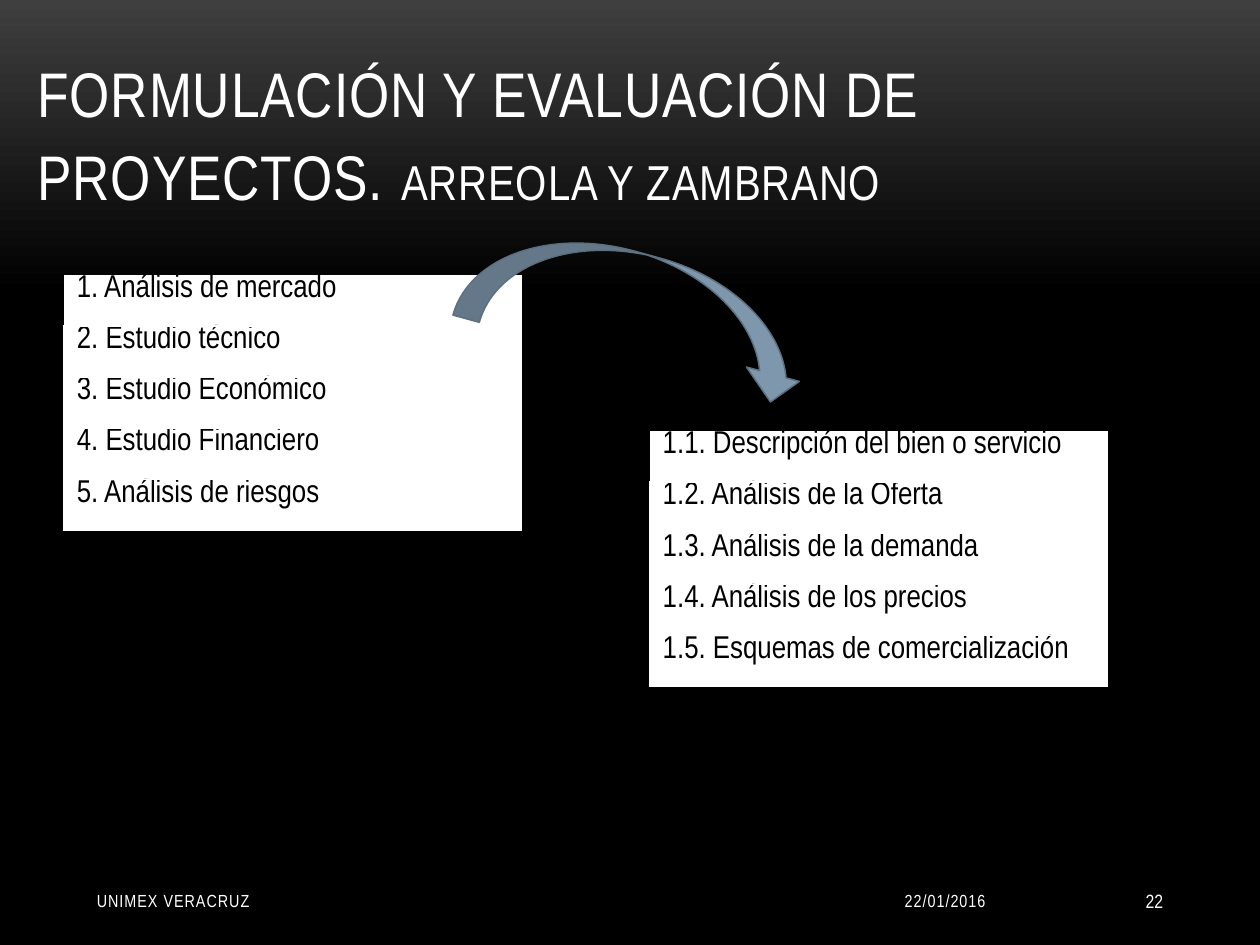
from dataclasses import dataclass

from lxml import etree
from pptx import Presentation
from pptx.dml.color import RGBColor
from pptx.enum.shapes import MSO_SHAPE
from pptx.enum.text import MSO_ANCHOR, PP_ALIGN
from pptx.oxml.ns import qn
from pptx.util import Inches, Pt

LEFT, RIGHT = PP_ALIGN.LEFT, PP_ALIGN.RIGHT
MIDDLE, BOTTOM = MSO_ANCHOR.MIDDLE, MSO_ANCHOR.BOTTOM
CURVED_ARROW = MSO_SHAPE.CURVED_DOWN_ARROW
FONT = "Arial Narrow"
WHITE, BLACK = "FFFFFF", "000000"
TABLE_WIDTH, ROW_HEIGHT = 3.63, 0.406


@dataclass
class TopicTable:
    left: float
    top: float
    topics: list[str]


@dataclass
class Label:
    text: str
    left: float
    width: float
    size: float = 10
    spacing: float = 0.6
    align: PP_ALIGN = RIGHT


TABLES = [
    TopicTable(0.51, 2.18, [
        "1. Análisis de mercado",
        "2. Estudio técnico",
        "3. Estudio Económico",
        "4. Estudio Financiero",
        "5. Análisis de riesgos",
    ]),
    TopicTable(5.16, 3.42, [
        "1.1. Descripción del bien o servicio",
        "1.2. Análisis de la Oferta",
        "1.3. Análisis de la demanda",
        "1.4. Análisis de los precios",
        "1.5. Esquemas de comercialización",
    ]),
]

FOOTER = [
    Label("22/01/2016", 6.25, 1.67),
    Label("UNIMEX VERACRUZ", 0.67, 3.17, align=LEFT),
    Label("22", 8.25, 1.08, size=11, spacing=0),
]


def rgb(value: str) -> RGBColor:
    return RGBColor.from_string(value)


def add_span(para, text: str, *, size: float, color: str = WHITE, spacing: float = 0) -> None:
    span = para.add_run()
    span.text = text
    span.font.name = FONT
    span.font.size = Pt(size)
    span.font.color.rgb = rgb(color)
    if spacing:
        span.font._element.set("spc", str(round(spacing * 100)))


def add_box(page, left: float, top: float, width: float, height: float,
            *, anchor: MSO_ANCHOR, align: PP_ALIGN = LEFT):
    """Add an empty text box and return its first paragraph."""
    frame = page.shapes.add_textbox(
        Inches(left), Inches(top), Inches(width), Inches(height)).text_frame
    frame.word_wrap = True
    frame.vertical_anchor = anchor
    para = frame.paragraphs[0]
    para.alignment = align
    return para


def set_borders(cell, color: str | None) -> None:
    """Draw one-point borders, or none; borders must come before the cell's fill."""
    properties = cell._tc.get_or_add_tcPr()
    for index, side in enumerate(("lnL", "lnR", "lnT", "lnB")):
        line = etree.Element(qn(f"a:{side}"), w=str(Pt(1)))
        if color:
            fill = etree.SubElement(line, qn("a:solidFill"))
            etree.SubElement(fill, qn("a:srgbClr"), val=color)
        else:
            etree.SubElement(line, qn("a:noFill"))
        properties.insert(index, line)


def add_topic_table(page, data: TopicTable) -> None:
    count = len(data.topics)
    table = page.shapes.add_table(
        count, 1, Inches(data.left), Inches(data.top),
        Inches(TABLE_WIDTH), Inches(ROW_HEIGHT * count)).table
    table.first_row = table.horz_banding = False
    for index, topic in enumerate(data.topics):
        cell = table.cell(index, 0)
        cell.margin_top = cell.margin_bottom = 0
        cell.fill.solid()
        cell.fill.fore_color.rgb = rgb(WHITE)
        set_borders(cell, WHITE if index else None)
        add_span(cell.text_frame.paragraphs[0], topic, size=18, color=BLACK)


def add_arrow(page) -> None:
    arrow = page.shapes.add_shape(
        CURVED_ARROW, Inches(3.66), Inches(2.02), Inches(2.83), Inches(0.87))
    arrow.rotation = 15.3
    arrow.shadow.inherit = False
    arrow.fill.solid()
    arrow.fill.fore_color.rgb = rgb("7E97AD")
    arrow.line.color.rgb = rgb("5D7080")
    arrow.line.width = Pt(0.85)


def set_background(page) -> None:
    fill = page.background.fill
    fill.gradient()
    fill.gradient_angle = 270
    for stop, (position, color) in zip(fill.gradient_stops, [(0, "3F3F3F"), (0.31, BLACK)]):
        stop.position = position
        stop.color.rgb = rgb(color)


def main() -> None:
    deck = Presentation()
    deck.slide_width, deck.slide_height = Inches(10), Inches(7.5)
    page = deck.slides.add_slide(deck.slide_layouts[6])
    set_background(page)

    title = add_box(page, 0.2, 0, 9.61, 1.75, anchor=BOTTOM)
    for text, size in [("FORMULACIÓN Y EVALUACIÓN DE PROYECTOS.", 36),
                       (" ", 40), ("ARREOLA Y ZAMBRANO", 28)]:
        add_span(title, text, size=size, spacing=0.5)

    for label in FOOTER:
        para = add_box(page, label.left, 6.95, label.width, 0.4,
                       anchor=MIDDLE, align=label.align)
        add_span(para, label.text, size=label.size, spacing=label.spacing)

    for data in TABLES:
        add_topic_table(page, data)
    add_arrow(page)
    deck.save("out.pptx")


if __name__ == "__main__":
    main()
